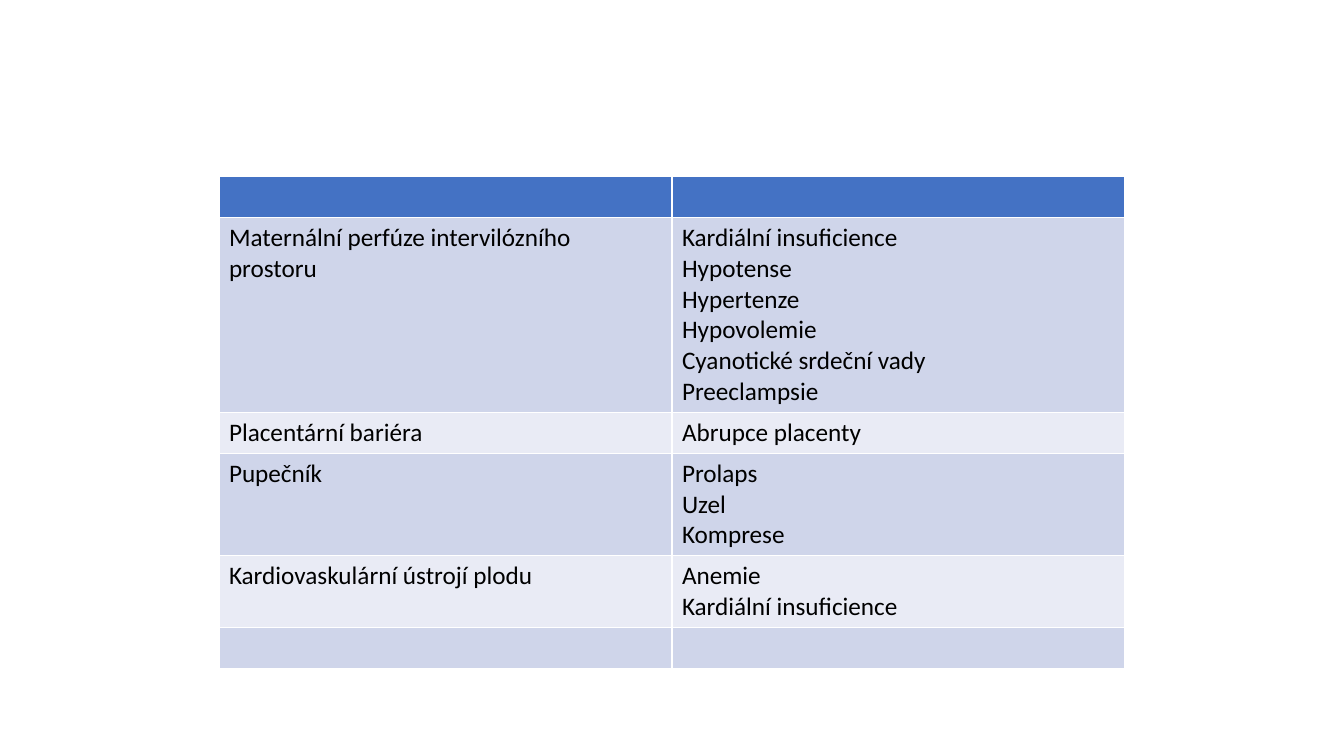
"""Build a slide with a table of causes grouped by site."""
from pptx import Presentation
from pptx.dml.color import RGBColor
from pptx.util import Pt

CAUSES = [
    ("", [""]),
    ("Maternální perfúze intervilózního prostoru",
     ["Kardiální insuficience", "Hypotense", "Hypertenze", "Hypovolemie",
      "Cyanotické srdeční vady", "Preeclampsie"]),
    ("Placentární bariéra", ["Abrupce placenty"]),
    ("Pupečník", ["Prolaps", "Uzel", "Komprese"]),
    ("Kardiovaskulární ústrojí plodu", ["Anemie", "Kardiální insuficience"]),
    ("", [""]),
]

THEME = {
    "font": "Calibri",
    "size": Pt(18),
    "text": RGBColor.from_string("000000"),
    "header": RGBColor.from_string("4472C4"),
    "bands": [RGBColor.from_string("E9EBF5"), RGBColor.from_string("CFD5EA")],
}

PAGE_WIDTH, PAGE_HEIGHT = 960, 540
LEFT, TOP, COLUMN_WIDTH = 156.4, 126.2, 323.6
LINE_HEIGHT, CELL_PADDING = 22, 7.2


def fill_cell(cell, lines, color):
    """Write one paragraph per line on a plain fill."""
    cell.fill.solid()
    cell.fill.fore_color.rgb = color
    cell.text = "\n".join(lines)
    for para in cell.text_frame.paragraphs:
        para.font.name = THEME["font"]
        para.font.size = THEME["size"]
        para.font.color.rgb = THEME["text"]


def add_causes(page):
    """Add the table, each row as tall as its list of causes."""
    heights = [len(causes) * LINE_HEIGHT + CELL_PADDING for _, causes in CAUSES]
    table = page.shapes.add_table(
        len(CAUSES), 2, Pt(LEFT), Pt(TOP), Pt(2 * COLUMN_WIDTH), Pt(sum(heights))
    ).table
    for column in table.columns:
        column.width = Pt(COLUMN_WIDTH)
    for index, (site, causes) in enumerate(CAUSES):
        table.rows[index].height = Pt(heights[index])
        color = THEME["bands"][index % 2] if index else THEME["header"]
        fill_cell(table.cell(index, 0), [site], color)
        fill_cell(table.cell(index, 1), causes, color)


def main():
    """Create and save the deck."""
    deck = Presentation()
    deck.slide_width, deck.slide_height = Pt(PAGE_WIDTH), Pt(PAGE_HEIGHT)
    page = deck.slides.add_slide(deck.slide_layouts[6])
    add_causes(page)
    deck.save("out.pptx")


if __name__ == "__main__":
    main()
